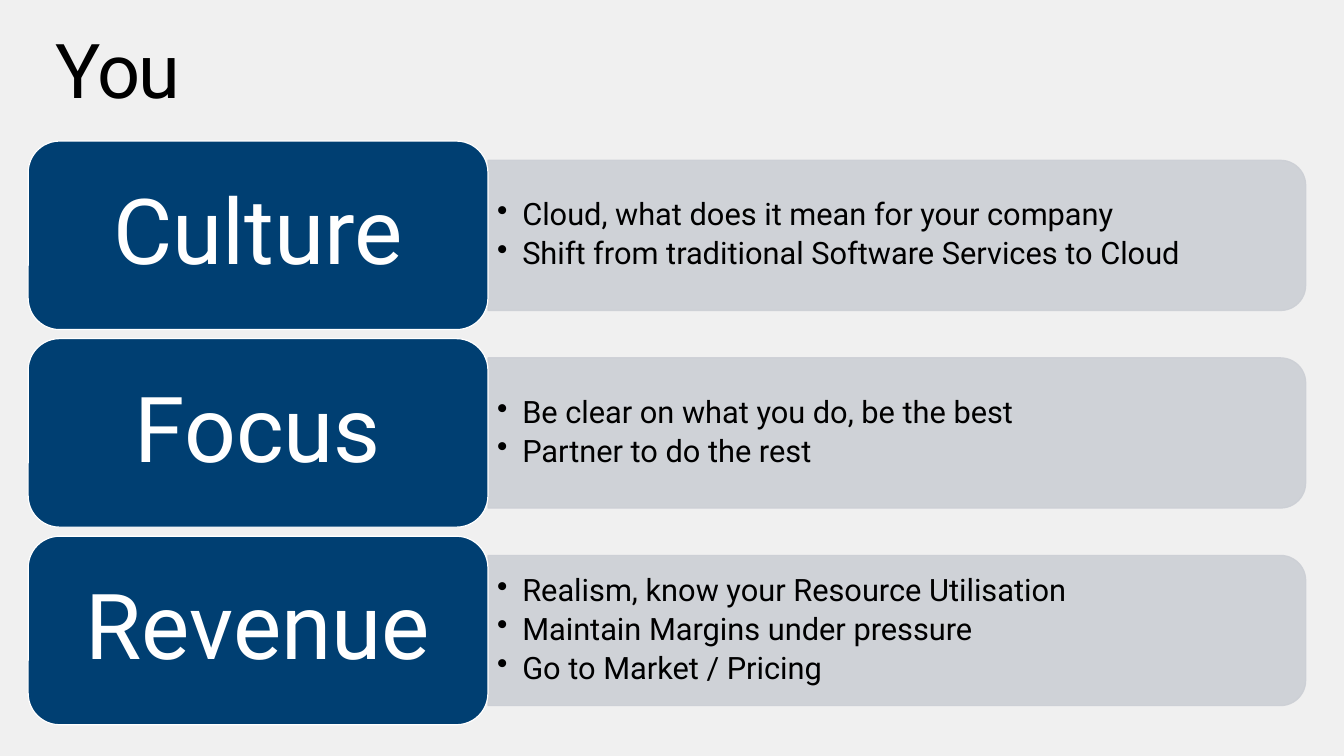
from lxml import etree
from pptx import Presentation
from pptx import util as u
from pptx.dml.color import RGBColor
from pptx.enum import shapes, text
from pptx.oxml import ns

PAPER = RGBColor(0xF0, 0xF0, 0xF0)
NAVY = RGBColor(0x00, 0x3F, 0x72)
GREY = RGBColor(0xCC, 0xCF, 0xD5)
WHITE = RGBColor(0xFF, 0xFF, 0xFF)
BLACK = RGBColor(0x00, 0x00, 0x00)

THEMES = [
    ("Culture", ["Cloud, what does it mean for your company",
                 "Shift from traditional Software Services to Cloud"]),
    ("Focus", ["Be clear on what you do, be the best",
               "Partner to do the rest"]),
    ("Revenue", ["Realism, know your Resource Utilisation",
                 "Maintain Margins under pressure",
                 "Go to Market / Pricing"]),
]
LEFT, TOP, PITCH = 0.28, 1.4, 1.96
CARD_W, CARD_H = 4.56, 1.87
BAND_W, BAND_H = 8.11, 1.49
POINTS_W, POINTS_H = 8.04, 1.35


def set_all(target, values):
    for name, value in values.items():
        setattr(target, name, value)


class Deck:
    FONT = "Roboto"
    LINE_WIDTH = u.Pt(0.85)

    def __init__(self):
        self.prs = Presentation()
        set_all(self.prs, {"slide_width": u.Inches(13.33),
                           "slide_height": u.Inches(7.5)})
        self.slide = self.prs.slides.add_slide(self.prs.slide_layouts[6])
        self.slide.background.fill.solid()
        self.slide.background.fill.fore_color.rgb = PAPER

    def shape(self, kind, box, fill, line):
        outline = self.slide.shapes.add_shape(kind, *map(u.Inches, box))
        outline.shadow.inherit = False
        outline.fill.solid()
        outline.fill.fore_color.rgb = fill
        outline.line.color.rgb = line
        outline.line.width = self.LINE_WIDTH
        return outline

    def fill_text(self, frame, lines, size, color, margins, anchor, **layout):
        """Fill a text frame, one paragraph a line, and return the paragraphs."""
        side, edge = map(u.Inches, margins)
        set_all(frame, {"word_wrap": True, "vertical_anchor": anchor,
                        "margin_left": side, "margin_right": side,
                        "margin_top": edge, "margin_bottom": edge})
        frame.text = "\n".join(lines)
        for paragraph in frame.paragraphs:
            set_all(paragraph, {"line_spacing": 0.9, **layout})
            font = paragraph.runs[0].font
            set_all(font, {"name": self.FONT, "size": u.Pt(size)})
            font.color.rgb = color
        return frame.paragraphs

    def text_box(self, box):
        return self.slide.shapes.add_textbox(*map(u.Inches, box)).text_frame

    def title(self, words, box):
        paragraph, = self.fill_text(self.text_box(box), [words], 54, BLACK,
                                    (0, 0), text.MSO_ANCHOR.TOP)
        paragraph.runs[0]._r.get_or_add_rPr().set("spc", "-100")

    def band(self, left, middle):
        """Grey bar rounded at its right end: a tall shape turned by 90 degrees."""
        box = (left + (BAND_W - BAND_H) / 2, middle - BAND_W / 2, BAND_H, BAND_W)
        bar = self.shape(shapes.MSO_SHAPE.ROUND_2_SAME_RECTANGLE, box, GREY, GREY)
        bar.rotation = 90
        for color in bar._element.spPr.iter(ns.qn("a:srgbClr")):
            etree.SubElement(color, ns.qn("a:alpha"), val="90000")

    def points(self, lines, left, middle):
        box = (left, middle - POINTS_H / 2, POINTS_W, POINTS_H)
        for paragraph in self.fill_text(self.text_box(box), lines, 22, BLACK,
                                        (0.09, 0.05), text.MSO_ANCHOR.MIDDLE,
                                        space_after=u.Pt(3.9)):
            props = paragraph._p.get_or_add_pPr()
            props.set("marL", str(u.Inches(0.25)))
            props.set("indent", str(u.Inches(-0.25)))
            etree.SubElement(props, ns.qn("a:buChar"), char="•")

    def card(self, words, left, top):
        tile = self.shape(shapes.MSO_SHAPE.ROUNDED_RECTANGLE,
                          (left, top, CARD_W, CARD_H), NAVY, WHITE)
        self.fill_text(tile.text_frame, [words], 65, WHITE, (0.36, 0.23),
                       text.MSO_ANCHOR.MIDDLE, alignment=text.PP_ALIGN.CENTER)


def main():
    deck = Deck()
    for row, (theme, lines) in enumerate(THEMES):
        top = TOP + row * PITCH
        middle = top + CARD_H / 2
        deck.band(LEFT + CARD_W, middle)
        deck.points(lines, LEFT + CARD_W, middle)
        deck.card(theme, LEFT, top)
    deck.title("You", (0.55, 0.33, 12.19, 0.82))
    deck.prs.save("out.pptx")


if __name__ == "__main__":
    main()
